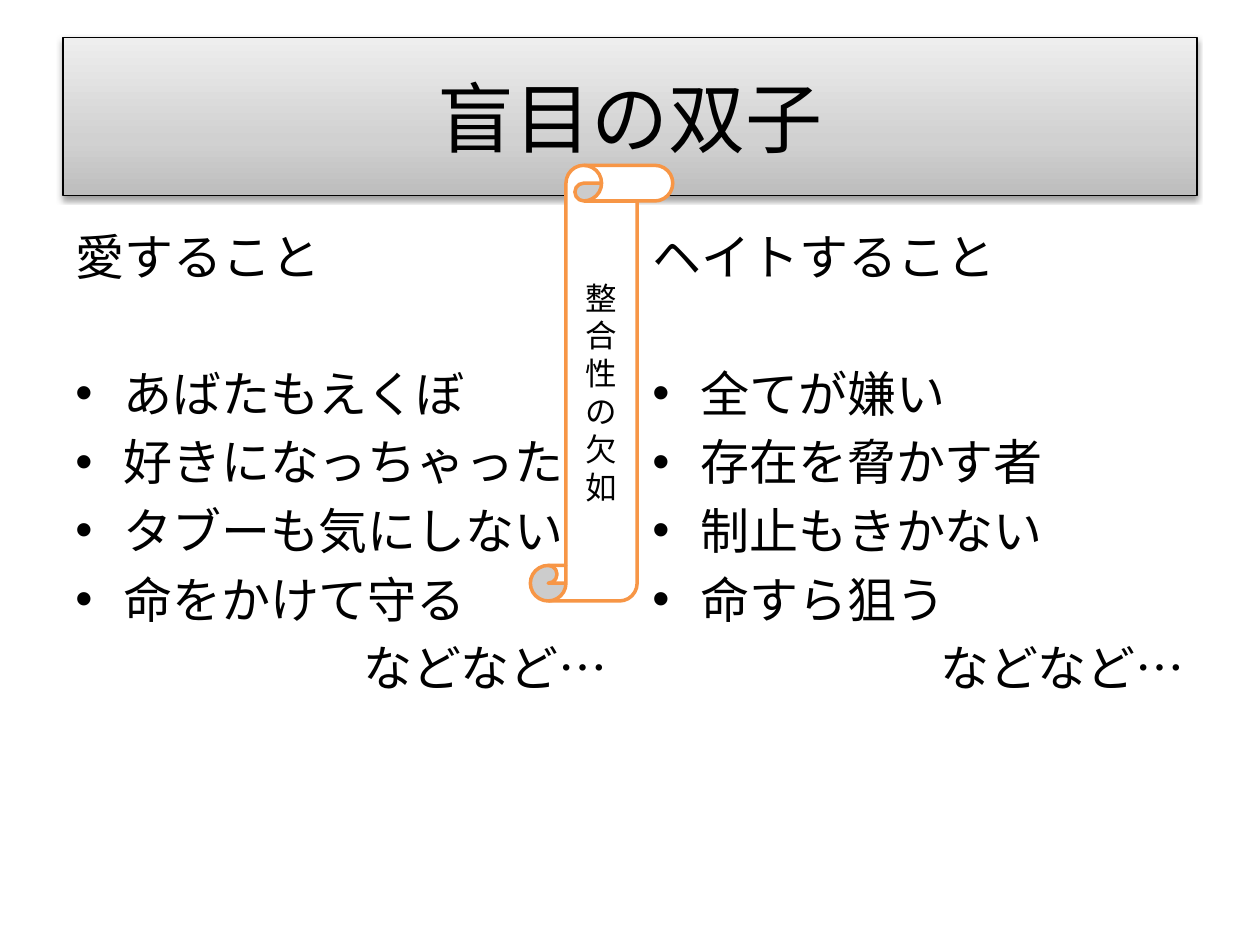
import copy
import lxml.etree
import pptx
import pptx.dml.color
import pptx.enum.shapes
import pptx.enum.text
import pptx.oxml.ns
import pptx.util

ALIGN = pptx.enum.text.PP_ALIGN
ANCHOR = pptx.enum.text.MSO_ANCHOR
SHAPE = pptx.enum.shapes.MSO_SHAPE
qn = pptx.oxml.ns.qn


def color(value):
    return pptx.dml.color.RGBColor.from_string(value)


def write(paragraph, text, size, formats):
    run = paragraph.add_run()
    run.text = text
    run.font.name = "Calibri"
    run.font.size = pptx.util.Pt(size)
    run.font.color.rgb = color("000000")
    for name, value in formats.items():
        setattr(paragraph, name, value)


presentation = pptx.Presentation()
presentation.slide_width = pptx.util.Inches(10)
presentation.slide_height = pptx.util.Inches(7.5)
width, height = presentation.slide_width, presentation.slide_height
slide = presentation.slides.add_slide(presentation.slide_layouts[6])
margin = int(width * 0.05)

title = slide.shapes.add_shape(
    SHAPE.RECTANGLE, margin, int(height * 0.04), width - 2 * margin, int(height / 6))
title.line.color.rgb = color("000000")
title.line.width = pptx.util.Pt(0.75)
title.fill.gradient()
title.fill.gradient_angle = 90
stops = title.fill.gradient_stops
stops[0].color.rgb = color("BDBDBD")
stops[1].color.rgb = color("EEEEEE")
stop_list = title._element.spPr.find(".//" + qn("a:gsLst"))
stop_list.insert(1, copy.deepcopy(stop_list[0]))
middle = title.fill.gradient_stops[1]
middle.position = 0.35
middle.color.rgb = color("D1D1D1")

title.shadow.inherit = False
effects = title._element.spPr.find(qn("a:effectLst"))
shadow = lxml.etree.SubElement(
    effects, qn("a:outerShdw"), blurRad=str(pptx.util.Pt(3.1)),
    dist=str(pptx.util.Pt(1.6)), dir="5400000", rotWithShape="0")
shade = lxml.etree.SubElement(shadow, qn("a:srgbClr"), val="000000")
lxml.etree.SubElement(shade, qn("a:alpha"), val="38000")
title.text_frame.vertical_anchor = ANCHOR.MIDDLE
write(title.text_frame.paragraphs[0], "盲目の双子", 44, {"alignment": ALIGN.CENTER})

columns = [
    ("愛すること", "あばたもえくぼ", "好きになっちゃった", "タブーも気にしない", "命をかけて守る", "などなど…"),
    ("ヘイトすること", "全てが嫌い", "存在を脅かす者", "制止もきかない", "命すら狙う", "などなど…"),
]
column_width = int(width * 0.442)
gap = width - 2 * margin - 2 * column_width
indent = str(pptx.util.Inches(0.38))
for column, lines in enumerate(columns):
    box = slide.shapes.add_textbox(
        margin + column * (column_width + gap), int(height * 0.233), column_width, int(height * 0.66))
    frame = box.text_frame
    frame.word_wrap = True
    for row, line in enumerate(lines):
        paragraph = frame.add_paragraph() if row else frame.paragraphs[0]
        last = row == len(lines) - 1
        write(paragraph, line, 28, {
            "alignment": ALIGN.RIGHT if last else ALIGN.LEFT,
            "space_before": pptx.util.Pt(44.5 if row == 1 else 5.6),
        })
        if row and not last:
            properties = paragraph._p.get_or_add_pPr()
            properties.set("marL", indent)
            properties.set("indent", "-" + indent)
            lxml.etree.SubElement(properties, qn("a:buFont"), typeface="Arial")
            lxml.etree.SubElement(properties, qn("a:buChar"), char="•")

scroll = slide.shapes.add_shape(
    SHAPE.VERTICAL_SCROLL, int(width * 0.421), int(height * 0.175), int(width * 0.113), int(height * 0.461))
scroll.adjustments[0] = 0.25
scroll.shadow.inherit = False
scroll.fill.solid()
scroll.fill.fore_color.rgb = color("FFFFFF")
scroll.line.color.rgb = color("F79646")
scroll.line.width = pptx.util.Pt(2)
scroll.text_frame.word_wrap = True
scroll.text_frame.vertical_anchor = ANCHOR.MIDDLE
write(scroll.text_frame.paragraphs[0], "整合性の欠如", 18, {"alignment": ALIGN.CENTER})

presentation.save("out.pptx")
